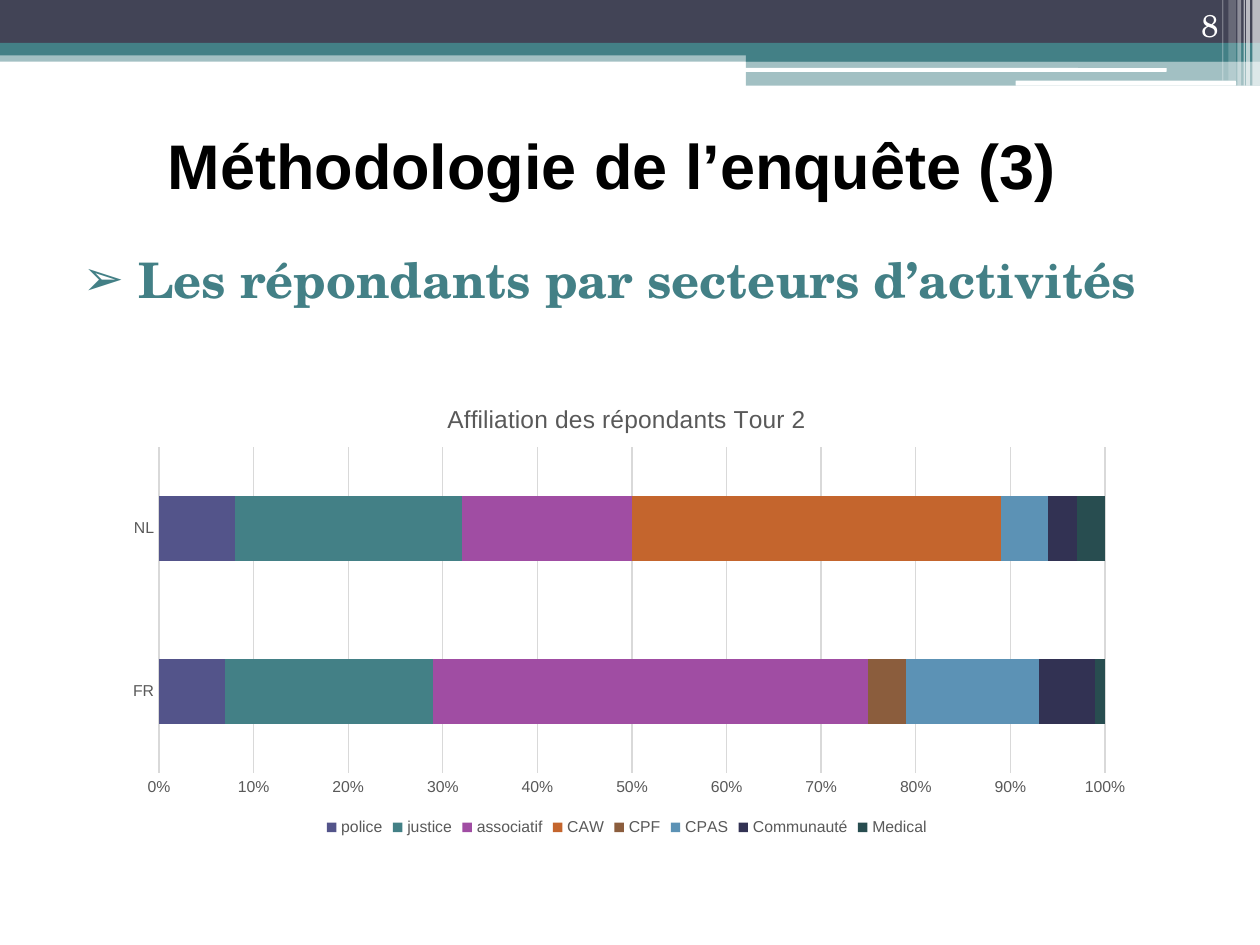
from typing import NamedTuple

from lxml.etree import SubElement
from pptx import Presentation
from pptx.chart.data import CategoryChartData
from pptx.dml.color import RGBColor
from pptx.enum.chart import XL_CHART_TYPE as CHART, XL_LEGEND_POSITION as LEGEND, XL_TICK_MARK as TICK
from pptx.enum.shapes import MSO_SHAPE as SHAPE
from pptx.enum.text import MSO_ANCHOR as ANCHOR, MSO_AUTO_SIZE as AUTO, PP_ALIGN as ALIGN
from pptx.oxml import parse_xml
from pptx.oxml.ns import nsdecls, qn
from pptx.util import Inches, Pt

SERIF, SANS = "TeX Gyre Schola", "Arial"
TEAL, SLATE, WHITE, GREY, GRID = "438086", "424456", "FFFFFF", "595959", "D9D9D9"


class Band(NamedTuple):
    left: float
    top: float
    width: float
    height: float
    color: str
    opacity: int = 100
    rounded: bool = False


class Sector(NamedTuple):
    name: str
    counts: tuple[int, int]
    color: str


BANDS = [
    # Full-width header
    Band(0, 0.4, 10, 0.09, TEAL, 49),
    Band(0, 0, 10, 0.34, SLATE),
    Band(0, 0.34, 10, 0.1, TEAL),
    # Stepped block on the right
    Band(5.92, 0.39, 4.08, 0.1, TEAL),
    Band(5.92, 0.48, 4.08, 0.2, TEAL, 49),
    Band(5.91, 0.54, 3.35, 0.03, WHITE, rounded=True),
    Band(8.06, 0.64, 1.75, 0.04, WHITE, rounded=True),
    # Translucent stripes at the edge
    Band(9.94, 0, 0.06, 0.68, WHITE, 64),
    Band(9.89, 0, 0.03, 0.68, WHITE, 64),
    Band(9.87, 0, 0.01, 0.68, WHITE, 60),
    Band(9.82, 0, 0.03, 0.68, WHITE, 40),
    Band(9.75, 0, 0.06, 0.64, WHITE, 20),
    Band(9.7, 0, 0.01, 0.64, WHITE, 29),
]

REGIONS = ("FR", "NL")
SECTORS = [
    Sector("police", (7, 8), "53548A"),
    Sector("justice", (22, 24), TEAL),
    Sector("associatif", (46, 18), "A04DA3"),
    Sector("CAW", (0, 39), "C4652D"),
    Sector("CPF", (4, 0), "8B5D3D"),
    Sector("CPAS", (14, 5), "5C92B5"),
    Sector("Communauté", (6, 3), "323253"),
    Sector("Medical", (1, 3), "284D50"),
]


def rgb(color: str) -> RGBColor:
    return RGBColor.from_string(color)


def format_font(font, color: str, **values) -> None:
    font.color.rgb = rgb(color)
    for name, value in values.items():
        setattr(font, name, value)


def draw_band(slide, band: Band) -> None:
    kind = SHAPE.ROUNDED_RECTANGLE if band.rounded else SHAPE.RECTANGLE
    sp = slide.shapes.add_shape(kind, *map(Inches, band[:4]))
    sp.shadow.inherit = False
    sp.line.fill.background()
    sp.fill.solid()
    sp.fill.fore_color.rgb = rgb(band.color)
    if band.opacity < 100:
        clr = sp._element.spPr.find(".//" + qn("a:srgbClr"))
        SubElement(clr, qn("a:alpha"), val=str(band.opacity * 1000))


def write_text(sp, text: str, anchor, align, color: str, **font):
    """Fill a text shape with one paragraph and return it."""
    tf = sp.text_frame
    frame = {"word_wrap": True, "auto_size": AUTO.NONE, "vertical_anchor": anchor}
    for name, value in frame.items():
        setattr(tf, name, value)
    p = tf.paragraphs[0]
    p.alignment = align
    r = p.add_run()
    r.text = text
    format_font(r.font, color, **font)
    return p


def add_bullet(p, char: str, color: str) -> None:
    pPr = p._p.get_or_add_pPr()
    pPr.set("marL", str(Inches(0.5)))
    pPr.set("indent", str(Inches(-0.44)))
    SubElement(SubElement(pPr, qn("a:buClr")), qn("a:srgbClr"), val=color)
    SubElement(pPr, qn("a:buFont"), typeface=SANS)
    SubElement(pPr, qn("a:buChar"), char=char)


def set_plot_area(chart, **fractions: float) -> None:
    """Fix the inner plot area as fractions of the chart."""
    area = chart._chartSpace.chart.plotArea
    for old in area.findall(qn("c:layout")):
        area.remove(old)
    parts = "".join(f'<c:{k} val="{v}"/>' for k, v in fractions.items())
    area.insert(0, parse_xml(
        f'<c:layout {nsdecls("c")}><c:manualLayout><c:layoutTarget val="inner"/>'
        f'<c:xMode val="edge"/><c:yMode val="edge"/>{parts}</c:manualLayout></c:layout>'))


def draw_chart(slide) -> None:
    data = CategoryChartData()
    data.categories = REGIONS
    for sector in SECTORS:
        data.add_series(sector.name, sector.counts)
    chart = slide.shapes.add_chart(
        CHART.BAR_STACKED_100, *map(Inches, (0.85, 3.04, 8.25, 3.64)), data).chart
    format_font(chart.font, GREY, name=SANS, size=Pt(9))
    set_plot_area(chart, x=0.05, y=0.14, w=0.91, h=0.71)

    # Title and legend
    chart.has_title = True
    p = chart.chart_title.text_frame.paragraphs[0]
    r = p.add_run()
    r.text = "Affiliation des répondants Tour 2"
    format_font(r.font, GREY, name=SANS, size=Pt(14), bold=False)
    chart.chart_title.include_in_layout = False
    chart.has_legend = True
    chart.legend.position = LEGEND.BOTTOM
    chart.legend.include_in_layout = False
    format_font(chart.legend.font, GREY, name=SANS, size=Pt(9))

    # Bars
    plot = chart.plots[0]
    plot.gap_width, plot.overlap, plot.vary_by_categories = 150, 100, False
    for series, sector in zip(plot.series, SECTORS):
        series.format.fill.solid()
        series.format.fill.fore_color.rgb = rgb(sector.color)

    # Axes
    regions, share = chart.category_axis, chart.value_axis
    for axis in (regions, share):
        axis.major_tick_mark = axis.minor_tick_mark = TICK.NONE
        format_font(axis.tick_labels.font, GREY, name=SANS, size=Pt(9))
    share.minimum_scale, share.maximum_scale, share.major_unit = 0, 1, 0.1
    share.tick_labels.number_format = "0%"
    share.tick_labels.number_format_is_linked = False
    share.has_major_gridlines = True
    share.format.line.fill.background()
    for line in (regions.format.line, share.major_gridlines.format.line):
        line.color.rgb = rgb(GRID)
        line.width = Pt(0.75)


def main() -> None:
    prs = Presentation()
    prs.slide_width, prs.slide_height = Inches(10), Inches(7.5)
    s = prs.slides.add_slide(prs.slide_layouts[5])

    for band in BANDS:
        draw_band(s, band)

    # Title
    title = s.shapes.title
    title.left, title.top, title.width, title.height = map(Inches, (0.36, 0.96, 9, 0.69))
    write_text(title, "Méthodologie de l’enquête (3)", ANCHOR.MIDDLE, ALIGN.CENTER,
               "000000", name=SANS, size=Pt(36), bold=True)

    # Heading with arrow bullet
    body = s.shapes.add_textbox(*map(Inches, (0.5, 1.93, 9, 5.26)))
    p = write_text(body, "Les répondants par secteurs d’activités", ANCHOR.TOP, ALIGN.LEFT,
                   TEAL, name=SERIF, size=Pt(28), bold=True)
    add_bullet(p, "➢", TEAL)

    # Slide number
    number = s.shapes.add_textbox(*map(Inches, (8.94, 0, 0.83, 0.4)))
    write_text(number, "8", ANCHOR.BOTTOM, ALIGN.RIGHT, WHITE, name=SERIF, size=Pt(18))

    draw_chart(s)
    prs.save("out.pptx")


if __name__ == "__main__":
    main()
